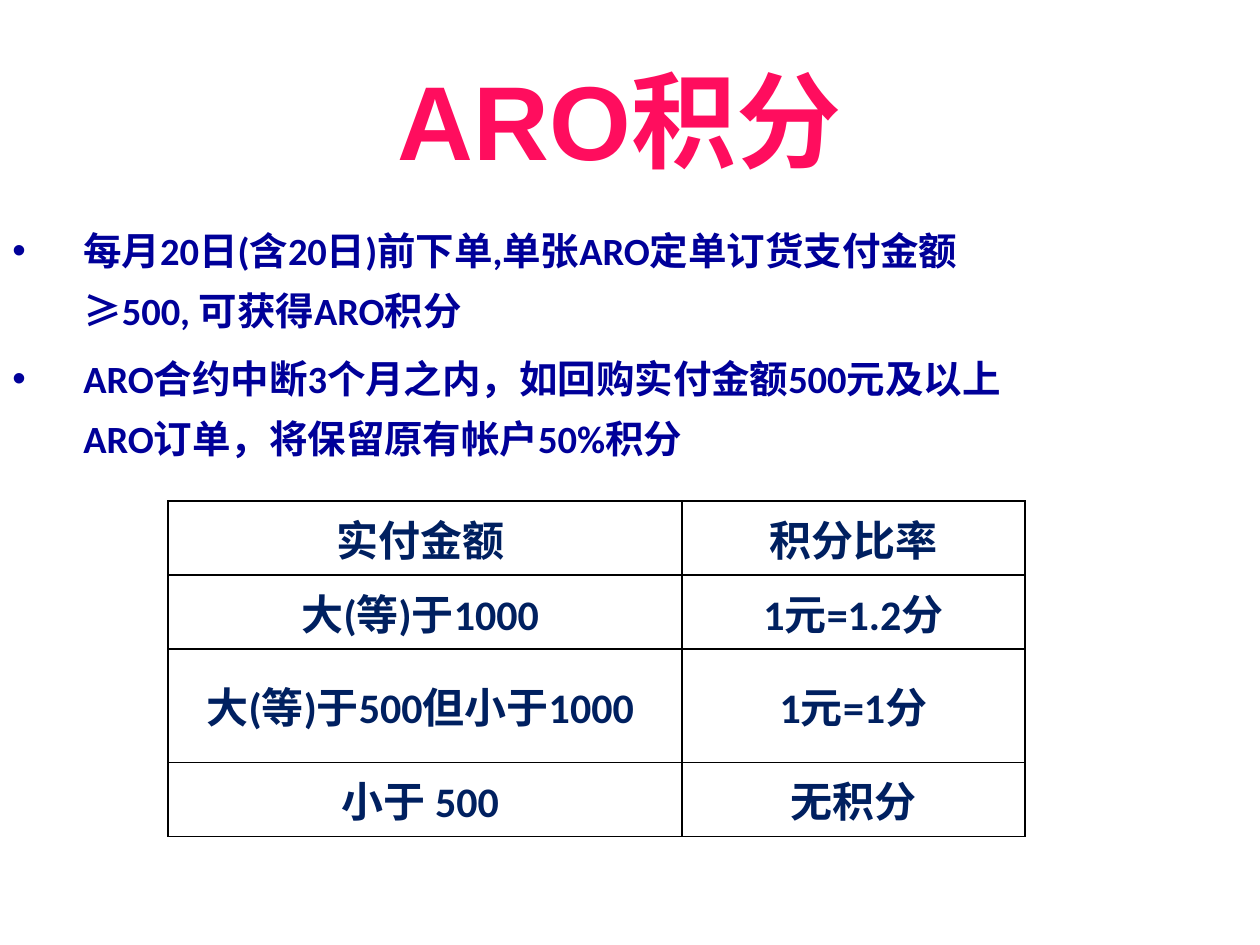
from dataclasses import dataclass

from lxml import etree
from pptx import Presentation
from pptx.dml.color import RGBColor
from pptx.enum.text import MSO_ANCHOR, MSO_AUTO_SIZE, PP_ALIGN
from pptx.oxml.ns import qn
from pptx.util import Emu, Pt

CENTER, LEFT = PP_ALIGN.CENTER, PP_ALIGN.LEFT
TOP, MIDDLE = MSO_ANCHOR.TOP, MSO_ANCHOR.MIDDLE
NO_AUTOFIT = MSO_AUTO_SIZE.NONE
PX_PER_INCH = 126
TITLE_ONLY = 5


@dataclass(frozen=True)
class Theme:
    title_color: str = "FF0D5E"
    body_color: str = "000099"
    table_color: str = "002060"
    border_color: str = "000000"
    title_font: str = "Arial"
    body_font: str = "Calibri"
    title_size: int = 60
    body_size: int = 22
    table_size: int = 24


@dataclass(frozen=True)
class Area:
    left: int
    top: int
    width: int
    height: int


THEME = Theme()
TITLE_AREA = Area(186, 49, 867, 140)
RULES_AREA = Area(0, 207, 1067, 267)
BULLET_INDENT = 71
TABLE_LEFT, TABLE_TOP = 168, 501
COLUMN_WIDTHS = (514, 343)
ROW_HEIGHT = 74

RULES = (
    "每月20日(含20日)前下单,单张ARO定单订货支付金额≥500, 可获得ARO积分",
    "ARO合约中断3个月之内，如回购实付金额500元及以上ARO订单，将保留原有帐户50%积分",
)
RATES = (
    ("实付金额 ", "积分比率"),
    ("大(等)于1000 ", "1元=1.2分"),
    ("大(等)于500但小于1000 ", "1元=1分"),
    ("小于 500 ", "无积分"),
)


def px(length: int) -> Emu:
    return Emu(round(length * 914400 / PX_PER_INCH))


def place(area: Area) -> tuple:
    return px(area.left), px(area.top), px(area.width), px(area.height)


def write(para, text: str, *, size: int, color: str,
          font: str = THEME.body_font, align=CENTER) -> None:
    para.alignment = align
    span = para.add_run()
    span.text = text
    span.font.name = font
    span.font.size = Pt(size)
    span.font.bold = True
    span.font.color.rgb = RGBColor.from_string(color)


def add_bullet(para) -> None:
    para.line_spacing = 1.3
    para.space_before = Pt(THEME.body_size * 0.2)
    properties = para._p.get_or_add_pPr()
    properties.set("marL", str(px(BULLET_INDENT)))
    properties.set("indent", str(-px(BULLET_INDENT)))
    etree.SubElement(properties, qn("a:buFont"), typeface="Arial")
    etree.SubElement(properties, qn("a:buChar"), char="•")


def add_borders(cell) -> None:
    properties = cell._tc.get_or_add_tcPr()
    for side in ("lnL", "lnR", "lnT", "lnB"):
        line = etree.SubElement(properties, qn(f"a:{side}"), w=str(Pt(1)))
        fill = etree.SubElement(line, qn("a:solidFill"))
        etree.SubElement(fill, qn("a:srgbClr"), val=THEME.border_color)


def draw_title(page) -> None:
    title = page.shapes.title
    title.left, title.top, title.width, title.height = place(TITLE_AREA)
    frame = title.text_frame
    frame.auto_size = NO_AUTOFIT
    frame.vertical_anchor = TOP
    write(frame.paragraphs[0], "ARO积分", size=THEME.title_size,
          color=THEME.title_color, font=THEME.title_font)


def draw_rules(page) -> None:
    frame = page.shapes.add_textbox(*place(RULES_AREA)).text_frame
    frame.word_wrap = True
    for index, rule in enumerate(RULES):
        para = frame.add_paragraph() if index else frame.paragraphs[0]
        write(para, rule, size=THEME.body_size, color=THEME.body_color, align=LEFT)
        add_bullet(para)


def draw_rates(page) -> None:
    area = Area(TABLE_LEFT, TABLE_TOP, sum(COLUMN_WIDTHS), ROW_HEIGHT * len(RATES))
    table = page.shapes.add_table(len(RATES), len(COLUMN_WIDTHS), *place(area)).table
    table.first_row = table.horz_banding = False
    for column, width in zip(table.columns, COLUMN_WIDTHS):
        column.width = px(width)
    for row, texts in zip(table.rows, RATES):
        row.height = px(ROW_HEIGHT)
        for cell, text in zip(row.cells, texts):
            cell.vertical_anchor = MIDDLE
            add_borders(cell)
            cell.fill.background()
            write(cell.text_frame.paragraphs[0], text,
                  size=THEME.table_size, color=THEME.table_color)


def main() -> None:
    deck = Presentation()
    deck.slide_width, deck.slide_height = px(1260), px(945)
    page = deck.slides.add_slide(deck.slide_layouts[TITLE_ONLY])
    draw_title(page)
    draw_rules(page)
    draw_rates(page)
    deck.save("out.pptx")


if __name__ == "__main__":
    main()
